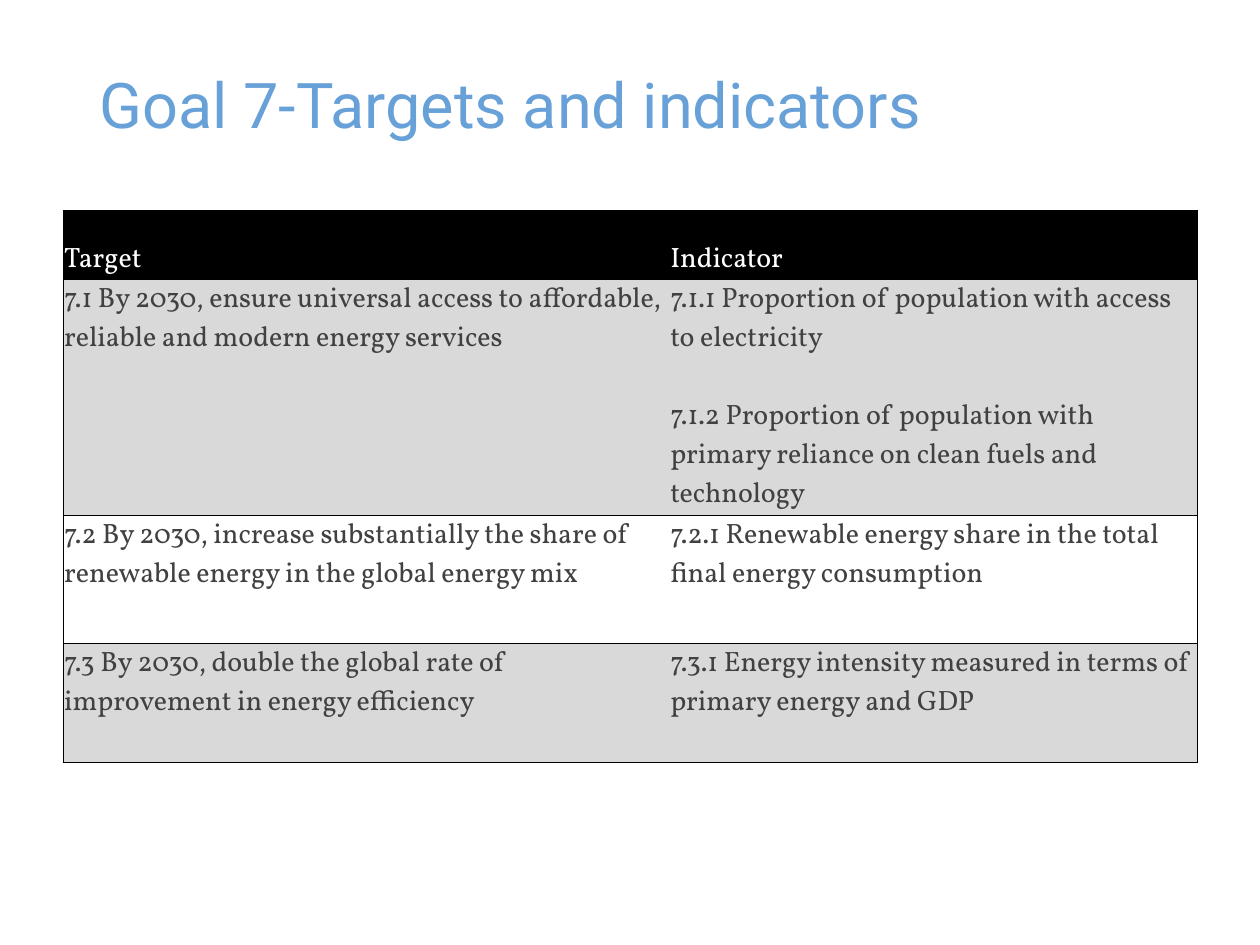
from lxml import etree
from pptx import Presentation
from pptx.dml.color import RGBColor
from pptx.enum.text import MSO_ANCHOR as Anchor, PP_ALIGN as Align
from pptx.oxml.ns import qn
from pptx.util import Inches, Pt

BLUE = RGBColor(0x68, 0xA1, 0xD7)
BLACK = RGBColor(0, 0, 0)
WHITE = RGBColor(0xFF, 0xFF, 0xFF)
GREY = RGBColor(0xD9, 0xD9, 0xD9)
DARK = RGBColor(0x41, 0x40, 0x42)

ROWS = [
    ("Target", "Indicator"),
    ("7.1 By 2030, ensure universal access to affordable, reliable and modern energy services",
     "7.1.1 Proportion of population with access to electricity\n"
     "7.1.2 Proportion of population with primary reliance on clean fuels and technology"),
    ("7.2 By 2030, increase substantially the share of renewable energy in the global energy mix",
     "7.2.1 Renewable energy share in the total final energy consumption"),
    ("7.3 By 2030, double the global rate of improvement in energy efficiency",
     "7.3.1 Energy intensity measured in terms of primary energy and GDP"),
]
WIDTHS = [4.81, 4.19]
HEIGHTS = [0.55, 1.87, 1.02, 0.94]
FILLS = [BLACK, GREY, WHITE, GREY]


def style(par, font, size, color):
    for run in par.runs:
        run.font.name = font
        run.font.size = Pt(size)
        run.font.color.rgb = color


def border(cell, hidden):
    """Draw thin black edges, leaving out the hidden side."""
    props = cell._tc.get_or_add_tcPr()
    for side in ("lnL", "lnR", "lnT", "lnB"):
        line = etree.SubElement(props, qn(f"a:{side}"), w=str(Pt(0.5)))
        if side == hidden:
            etree.SubElement(line, qn("a:noFill"))
        else:
            solid = etree.SubElement(line, qn("a:solidFill"))
            etree.SubElement(solid, qn("a:srgbClr"), val=str(BLACK))


prs = Presentation()
prs.slide_width, prs.slide_height = Inches(10), Inches(7.5)
slide = prs.slides.add_slide(prs.slide_layouts[5])

title = slide.shapes.title
title.left, title.top = Inches(0.69), Inches(0.53)
title.width, title.height = Inches(7.5), Inches(0.65)
frame = title.text_frame
frame.text = "Goal 7-Targets and indicators"
frame.vertical_anchor = Anchor.BOTTOM
head = frame.paragraphs[0]
head.alignment = Align.LEFT
head.line_spacing = 0.9
style(head, "Roboto", 36, BLUE)

table = slide.shapes.add_table(
    len(ROWS), len(WIDTHS), Inches(0.5), Inches(1.67),
    Inches(sum(WIDTHS)), Inches(sum(HEIGHTS))).table
for col, width in zip(table.columns, WIDTHS):
    col.width = Inches(width)

for r, (texts, height, fill) in enumerate(zip(ROWS, HEIGHTS, FILLS)):
    table.rows[r].height = Inches(height)
    for c, text in enumerate(texts):
        cell = table.cell(r, c)
        cell.text_frame.text = text
        cell.margin_left = cell.margin_right = cell.margin_top = Inches(0.01)
        cell.margin_bottom = 0
        cell.vertical_anchor = Anchor.TOP if r else Anchor.BOTTOM
        border(cell, "lnL" if c else "lnR")
        cell.fill.solid()
        cell.fill.fore_color.rgb = fill
        for i, par in enumerate(cell.text_frame.paragraphs):
            style(par, "Vollkorn", 16, DARK if r else WHITE)
            par.font.bold = False
            for run in par.runs:
                run.font.bold = False
            if i:
                par.space_before = Pt(22)

prs.save("out.pptx")
